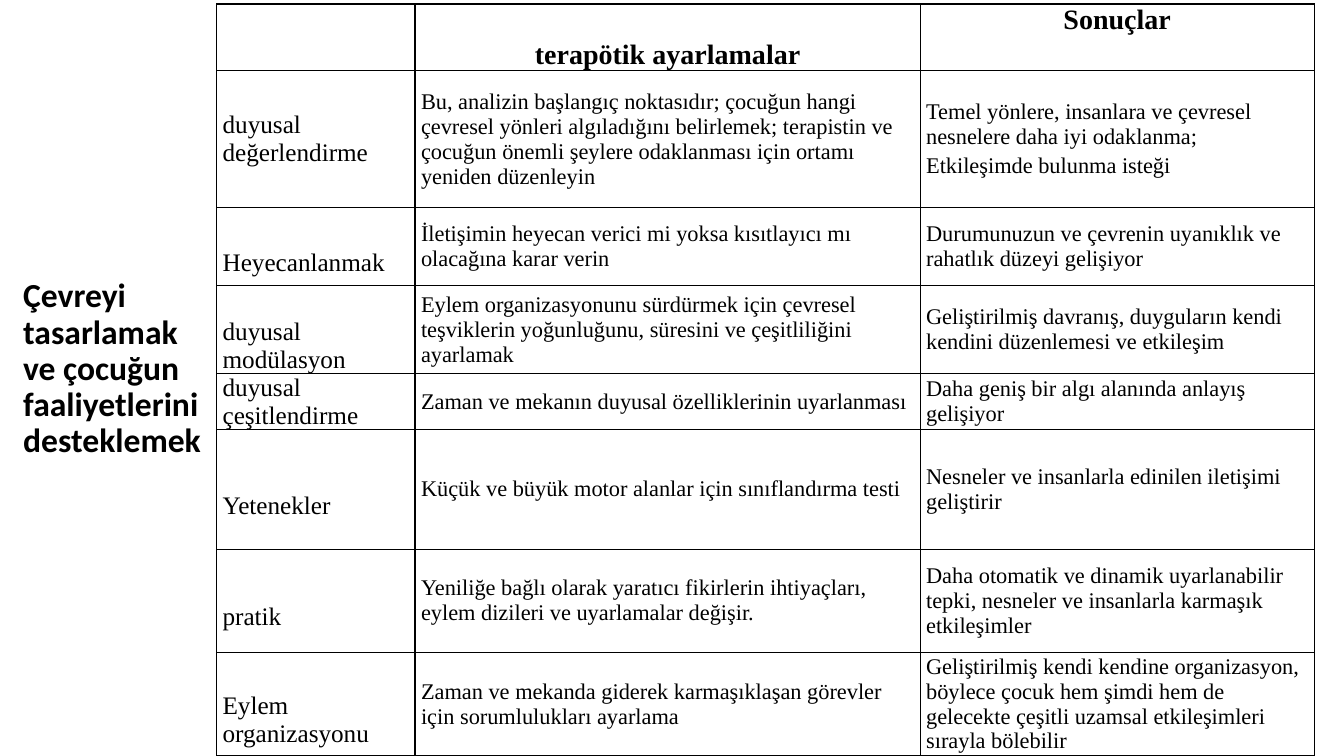
from lxml import etree
from pptx import Presentation
from pptx.dml.color import RGBColor
from pptx.enum.text import MSO_ANCHOR, MSO_AUTO_SIZE, PP_ALIGN
from pptx.oxml.ns import qn
from pptx.util import Cm, Pt

TOP, MID = MSO_ANCHOR.TOP, MSO_ANCHOR.MIDDLE
LEFT, CENTER = PP_ALIGN.LEFT, PP_ALIGN.CENTER
FIT_NONE = MSO_AUTO_SIZE.NONE
COLORS = {"ink": "000000", "paper": "FFFFFF"}
SERIF, SANS = "Times New Roman", "Calibri"

TITLE = "Çevreyi tasarlamak ve çocuğun faaliyetlerini desteklemek"
HEADS = ["", "terapötik ayarlamalar", "Sonuçlar"]
ROWS = [
    ["duyusal değerlendirme",
     "Bu, analizin başlangıç noktasıdır; çocuğun hangi çevresel yönleri algıladığını "
     "belirlemek; terapistin ve çocuğun önemli şeylere odaklanması için ortamı "
     "yeniden düzenleyin",
     "Temel yönlere, insanlara ve çevresel nesnelere daha iyi odaklanma;\n"
     "Etkileşimde bulunma isteği"],
    ["Heyecanlanmak",
     "İletişimin heyecan verici mi yoksa kısıtlayıcı mı olacağına karar verin",
     "Durumunuzun ve çevrenin uyanıklık ve rahatlık düzeyi gelişiyor"],
    ["duyusal modülasyon",
     "Eylem organizasyonunu sürdürmek için çevresel teşviklerin yoğunluğunu, "
     "süresini ve çeşitliliğini ayarlamak",
     "Geliştirilmiş davranış, duyguların kendi kendini düzenlemesi ve etkileşim"],
    ["duyusal çeşitlendirme",
     "Zaman ve mekanın duyusal özelliklerinin uyarlanması",
     "Daha geniş bir algı alanında anlayış gelişiyor"],
    ["Yetenekler",
     "Küçük ve büyük motor alanlar için sınıflandırma testi",
     "Nesneler ve insanlarla edinilen iletişimi geliştirir"],
    ["pratik",
     "Yeniliğe bağlı olarak yaratıcı fikirlerin ihtiyaçları, eylem dizileri ve "
     "uyarlamalar değişir.",
     "Daha otomatik ve dinamik uyarlanabilir tepki, nesneler ve insanlarla karmaşık "
     "etkileşimler"],
    ["Eylem organizasyonu",
     "Zaman ve mekanda giderek karmaşıklaşan görevler için sorumlulukları ayarlama",
     "Geliştirilmiş kendi kendine organizasyon, böylece çocuk hem şimdi hem de "
     "gelecekte çeşitli uzamsal etkileşimleri sırayla bölebilir"],
]
WIDTHS = [5.0, 12.73, 9.93]
HEIGHTS = [1.66, 3.45, 1.96, 2.22, 1.39, 3.02, 2.6, 2.6]
FLUSH = {1, 4}  # rows whose label is not lowered
DROP = 0.81     # lowers the other labels by one line
HEAD_DROP = 0.9


def color(name):
    return RGBColor.from_string(COLORS[name])


def style(par, face, size, bold, align):
    par.alignment = align
    font = par.font
    font.name, font.size, font.bold = face, Pt(size), bold
    font.color.rgb = color("ink")


def add_title(slide):
    box = slide.shapes.title
    box.left, box.top, box.width, box.height = Cm(0.33), Cm(2.26), Cm(5.13), Cm(14.1)
    frame = box.text_frame
    frame.text = TITLE
    frame.word_wrap = True
    frame.auto_size = FIT_NONE
    frame.vertical_anchor = MID
    par = frame.paragraphs[0]
    par.line_spacing = 0.9
    style(par, SANS, 24, True, LEFT)


def border(cell):
    props = cell._tc.get_or_add_tcPr()
    for at, side in enumerate(("lnL", "lnR", "lnT", "lnB")):
        line = etree.Element(qn("a:" + side), w=str(Pt(1)))
        fill = etree.SubElement(line, qn("a:solidFill"))
        etree.SubElement(fill, qn("a:srgbClr"), val=COLORS["ink"])
        props.insert(at, line)


def fill_cell(cell, text, size, bold=False, align=LEFT, anchor=MID, drop=0):
    cell.fill.solid()
    cell.fill.fore_color.rgb = color("paper")
    border(cell)
    cell.margin_left = cell.margin_right = Cm(0.15)
    cell.margin_top, cell.margin_bottom = Cm(drop), 0
    cell.vertical_anchor = anchor
    cell.text = text
    for par in cell.text_frame.paragraphs:
        par.space_before = par.space_after = Pt(1.5)
        style(par, SERIF, size, bold, align)


def add_grid(slide):
    frame = slide.shapes.add_table(
        len(HEIGHTS), len(WIDTHS), Cm(5.46), Cm(0.1),
        Cm(sum(WIDTHS)), Cm(sum(HEIGHTS)))
    table = frame.table
    table.first_row = table.horz_banding = False
    for col, width in zip(table.columns, WIDTHS):
        col.width = Cm(width)
    for row, height in zip(table.rows, HEIGHTS):
        row.height = Cm(height)

    # Header
    for c, text in enumerate(HEADS):
        drop = HEAD_DROP if c == 1 else 0
        fill_cell(table.cell(0, c), text, 20, True, CENTER, TOP, drop)

    # Body
    for r, (label, change, result) in enumerate(ROWS, 1):
        fill_cell(table.cell(r, 0), label, 18, drop=0 if r in FLUSH else DROP)
        fill_cell(table.cell(r, 1), change, 16)
        fill_cell(table.cell(r, 2), result, 16)


def main():
    deck = Presentation()
    deck.slide_width, deck.slide_height = Cm(33.87), Cm(19.05)
    slide = deck.slides.add_slide(deck.slide_layouts[5])
    add_title(slide)
    add_grid(slide)
    deck.save("out.pptx")


if __name__ == "__main__":
    main()
